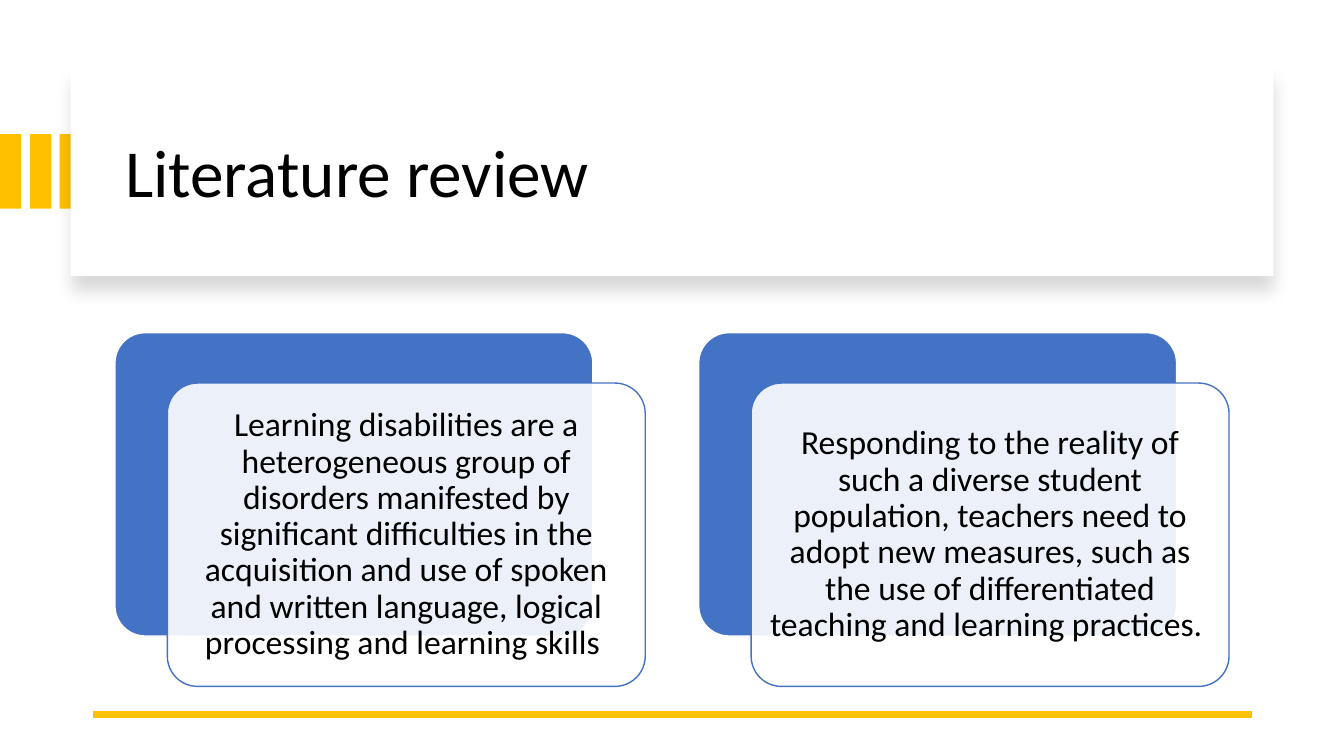
from lxml import etree
from pptx import Presentation
from pptx.dml.color import RGBColor
from pptx.enum.shapes import MSO_CONNECTOR, MSO_SHAPE
from pptx.enum.text import MSO_ANCHOR, MSO_AUTO_SIZE, PP_ALIGN
from pptx.oxml import parse_xml
from pptx.oxml.ns import nsdecls, qn
from pptx.util import Pt

PX = 9144  # 100 px to the inch
WHITE = RGBColor(0xFF, 0xFF, 0xFF)
BLACK = RGBColor(0, 0, 0)
GOLD = RGBColor(0xFF, 0xC0, 0x00)
BLUE = RGBColor(0x44, 0x72, 0xC4)
FONT = "Calibri"

CARDS = [
    "Learning disabilities are a heterogeneous group of disorders manifested by "
    "significant difficulties in the acquisition and use of spoken and written "
    "language, logical processing and learning skills ",
    "Responding to the reality of such a diverse student population, teachers need "
    "to adopt new measures, such as the use of differentiated teaching and learning "
    "practices. ",
]

prs = Presentation()
prs.slide_width, prs.slide_height = 1333 * PX, 750 * PX
s = prs.slides.add_slide(prs.slide_layouts[5])


def add_box(kind, x, y, w, h, fill, line=None):
    sp = s.shapes.add_shape(kind, x * PX, y * PX, w * PX, h * PX)
    sp.shadow.inherit = False
    sp.fill.solid()
    sp.fill.fore_color.rgb = fill
    if line is None:
        sp.line.fill.background()
    else:
        sp.line.color.rgb = line
        sp.line.width = Pt(1)
    return sp


def write(tf, text, size, align):
    tf.word_wrap = True
    tf.auto_size = MSO_AUTO_SIZE.NONE
    tf.vertical_anchor = MSO_ANCHOR.MIDDLE
    p = tf.paragraphs[0]
    p.alignment = align
    p.line_spacing = 0.9
    r = p.add_run()
    r.text = text
    r.font.name = FONT
    r.font.size = Pt(size)
    r.font.color.rgb = BLACK


# Title band
for i in range(3):
    add_box(MSO_SHAPE.RECTANGLE, round(i * 29.5), 133, 21, 74, GOLD)

panel = add_box(MSO_SHAPE.RECTANGLE, 70, 67, 1193, 207, WHITE)
effects = panel._element.spPr.find(qn("a:effectLst"))
effects.append(parse_xml(
    f'<a:outerShdw {nsdecls("a")} blurRad="{Pt(11)}" dist="{Pt(10)}" dir="5400000" '
    'algn="t" rotWithShape="0"><a:srgbClr val="000000"><a:alpha val="15000"/>'
    '</a:srgbClr></a:outerShdw>'))

title = s.shapes.title
title.left, title.top, title.width, title.height = (v * PX for v in (114, 89, 1113, 170))
write(title.text_frame, "Literature review", 48, PP_ALIGN.LEFT)
panel._element.addnext(title._element)  # bring the title in front of the panel

# Bottom rule
rule = s.shapes.add_connector(MSO_CONNECTOR.STRAIGHT, 1242 * PX, 709 * PX, 92 * PX, 709 * PX)
rule.line.color.rgb = GOLD
rule.line.width = Pt(4.5)
etree.SubElement(rule._element.spPr, qn("a:effectLst"))

# Cards, each over an offset blue backing
for i, text in enumerate(CARDS):
    x = 114 + i * 579
    back = add_box(MSO_SHAPE.ROUNDED_RECTANGLE, x, 330, 474, 301, BLUE, WHITE)
    card = add_box(MSO_SHAPE.ROUNDED_RECTANGLE, x + 52, 380, 474, 301, WHITE, BLUE)
    for sp in (back, card):
        sp.adjustments[0] = 0.1
    color = card._element.spPr.find(qn("a:solidFill")).find(qn("a:srgbClr"))
    etree.SubElement(color, qn("a:alpha")).set("val", "90000")
    tf = card.text_frame
    tf.margin_left = tf.margin_right = tf.margin_top = tf.margin_bottom = 10 * PX
    write(tf, text, 24, PP_ALIGN.CENTER)

prs.save("out.pptx")
